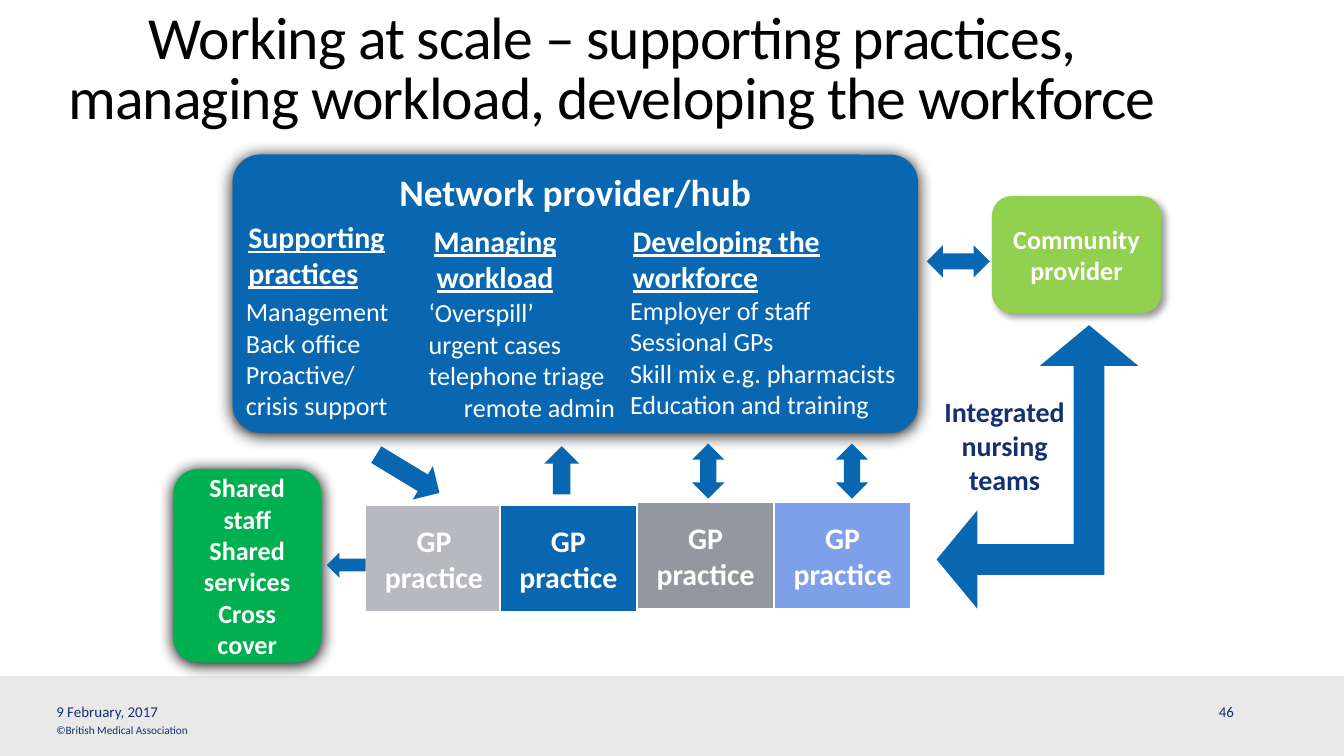
from dataclasses import dataclass
from typing import NamedTuple

from lxml.etree import SubElement
from pptx import Presentation
from pptx.dml.color import RGBColor
from pptx.enum.shapes import MSO_SHAPE
from pptx.enum.text import MSO_ANCHOR, MSO_AUTO_SIZE, PP_ALIGN
from pptx.oxml.ns import qn
from pptx.util import Pt


@dataclass(frozen=True)
class Theme:
    font: str = "Calibri"
    black: str = "000000"
    white: str = "FFFFFF"
    navy: str = "13316E"
    blue: str = "0967B1"
    band: str = "E9E9E9"
    lime: str = "92D050"
    green: str = "00B050"
    practices: tuple = ("B7B9BF", "0967B1", "93979F", "7DA0E9")
    title_size: float = 32
    hub_size: float = 20
    heading_size: float = 16
    label_size: float = 15
    body_size: float = 14
    footer_size: float = 8
    copyright_size: float = 6


class Box(NamedTuple):
    left: float
    top: float
    width: float
    height: float


class Style(NamedTuple):
    size: float
    color: str = "FFFFFF"
    bold: bool = False
    underline: bool = False
    align: PP_ALIGN = PP_ALIGN.LEFT
    anchor: MSO_ANCHOR = MSO_ANCHOR.TOP


class Shadow(NamedTuple):
    blur: float
    distance: float
    angle: float
    opacity: int


class Column(NamedTuple):
    heading: str
    heading_box: Box
    align: PP_ALIGN
    lines: str
    body_box: Box


class Arrow(NamedTuple):
    kind: MSO_SHAPE
    box: Box
    rotation: float = 0
    adjustments: tuple = ()


THEME = Theme()
CENTER, MIDDLE = PP_ALIGN.CENTER, MSO_ANCHOR.MIDDLE
GLOW = Shadow(8.5, 1, 90, 100)
SOFT = Shadow(4, 3, 45, 40)

COLUMNS = (
    Column("Supporting practices", Box(126, 113.8, 114.5, 46.1), PP_ALIGN.LEFT,
           "Management\nBack office\nProactive/\ncrisis support",
           Box(124.6, 154.8, 92.2, 74.9)),
    Column("Managing workload", Box(212.4, 115.9, 105.8, 46.1), CENTER,
           "‘Overspill’\nurgent cases\ntelephone triage\nremote admin",
           Box(222.5, 155.5, 121.7, 74.9)),
    Column("Developing the workforce", Box(331.9, 115.9, 141.8, 46.1), PP_ALIGN.LEFT,
           "Employer of staff\nSessional GPs\nSkill mix e.g. pharmacists\nEducation and training",
           Box(330.5, 154.1, 161.3, 74.9)),
)
PRACTICE_CORNERS = ((195.8, 270.7), (267.8, 270.7), (341.3, 269.3), (414.7, 269.3))
ARROWS = (
    Arrow(MSO_SHAPE.UP_ARROW, Box(291.6, 239, 18.7, 25.9)),
    Arrow(MSO_SHAPE.LEFT_RIGHT_ARROW, Box(496.5, 131.4, 33.8, 17.3)),
    Arrow(MSO_SHAPE.LEFT_UP_ARROW, Box(501.8, 174.2, 108, 151.9), 0, (0.153, 0.244, 0.202)),
    Arrow(MSO_SHAPE.UP_DOWN_ARROW, Box(370.8, 237.6, 17.3, 29.5)),
    Arrow(MSO_SHAPE.UP_DOWN_ARROW, Box(447.8, 237.6, 17.3, 29.5)),
    Arrow(MSO_SHAPE.LEFT_ARROW, Box(175, 295.9, 20.9, 13.7)),
    Arrow(MSO_SHAPE.RIGHT_ARROW, Box(198.7, 243.4, 39.6, 20.9), 31.2),
)


def points(box: Box) -> tuple:
    return tuple(Pt(value) for value in box)


def write(shape, text: str, style: Style, wrap: bool = True, inset: bool = True) -> None:
    frame = shape.text_frame
    frame.text = text
    frame.word_wrap = wrap
    frame.auto_size = MSO_AUTO_SIZE.NONE
    frame.vertical_anchor = style.anchor
    if not inset:
        frame.margin_left = frame.margin_right = frame.margin_top = frame.margin_bottom = 0
    for paragraph in frame.paragraphs:
        paragraph.alignment = style.align
        for run in paragraph.runs:
            run.font.name = THEME.font
            run.font.size = Pt(style.size)
            run.font.bold = style.bold
            run.font.underline = style.underline
            run.font.color.rgb = RGBColor.from_string(style.color)


def add_text(slide, box: Box, text: str, style: Style, wrap: bool = True, inset: bool = True):
    shape = slide.shapes.add_textbox(*points(box))
    write(shape, text, style, wrap, inset)
    return shape


def add_block(slide, kind: MSO_SHAPE, box: Box, fill: str, adjustments: tuple = ()):
    shape = slide.shapes.add_shape(kind, *points(box))
    shape.shadow.inherit = False
    shape.fill.solid()
    shape.fill.fore_color.rgb = RGBColor.from_string(fill)
    shape.line.fill.background()
    for index, value in enumerate(adjustments):
        shape.adjustments[index] = value
    return shape


def add_shadow(shape, shadow: Shadow) -> None:
    effects = shape._element.spPr.find(qn("a:effectLst"))
    outer = SubElement(effects, qn("a:outerShdw"), blurRad=str(Pt(shadow.blur)),
                       dist=str(Pt(shadow.distance)), dir=str(shadow.angle * 60000),
                       algn="ctr", rotWithShape="0")
    color = SubElement(outer, qn("a:srgbClr"), val=THEME.black)
    SubElement(color, qn("a:alpha"), val=str(shadow.opacity * 1000))


def add_title(slide) -> None:
    title = slide.shapes.title
    title.left, title.top, title.width, title.height = points(Box(22.3, 6.5, 611.3, 75.6))
    write(title, "Working at scale – supporting practices, "
          "managing workload, developing the workforce",
          Style(THEME.title_size, THEME.black, align=CENTER), inset=False)
    paragraph = title.text_frame.paragraphs[0]
    paragraph.line_spacing = Pt(32)
    paragraph.runs[0].font._element.set("spc", "-50")


def add_footer(slide) -> None:
    add_block(slide, MSO_SHAPE.RECTANGLE, Box(0, 362.2, 720, 42.8), THEME.band)
    for text, box, size in (
        ("©British Medical Association", Box(30.2, 387.4, 149, 7.2), THEME.copyright_size),
        ("9 February, 2017", Box(30.2, 376.6, 228.2, 9.4), THEME.footer_size),
        ("46", Box(653, 376.6, 20.2, 9.4), THEME.footer_size),
    ):
        add_text(slide, box, text, Style(size, THEME.navy, anchor=MIDDLE), inset=False)


def add_hub(slide) -> None:
    hub = add_block(slide, MSO_SHAPE.ROUNDED_RECTANGLE, Box(124.6, 82.8, 367.2, 149),
                    THEME.blue, (0.1,))
    add_shadow(hub, GLOW)
    write(hub, "Network provider/hub", Style(THEME.hub_size, bold=True, align=CENTER))
    for column in COLUMNS:
        heading = add_block(slide, MSO_SHAPE.RECTANGLE, column.heading_box, THEME.blue)
        write(heading, column.heading,
              Style(THEME.heading_size, bold=True, underline=True, align=column.align))
    for column in COLUMNS:
        body = add_text(slide, column.body_box, column.lines, Style(THEME.body_size), wrap=False)
        if column.heading == "Managing workload":
            last = body.text_frame.paragraphs[-1]
            last._p.get_or_add_pPr().set("marL", str(Pt(19)))


def add_practices(slide) -> None:
    for (left, top), fill in zip(PRACTICE_CORNERS, THEME.practices):
        practice = add_block(slide, MSO_SHAPE.FLOWCHART_PROCESS, Box(left, top, 73.4, 56.9), fill)
        practice.line.color.rgb = RGBColor.from_string(THEME.white)
        practice.line.width = Pt(0.75)
        write(practice, "GP practice",
              Style(THEME.heading_size, bold=True, align=CENTER, anchor=MIDDLE))


def add_partners(slide) -> None:
    style = Style(THEME.body_size, bold=True, align=CENTER, anchor=MIDDLE)
    for kind, box, fill, shadow, text in (
        (MSO_SHAPE.FLOWCHART_ALTERNATE_PROCESS, Box(531.4, 105.1, 90.7, 62.6),
         THEME.lime, SOFT, "Community provider"),
        (MSO_SHAPE.ROUNDED_RECTANGLE, Box(92.9, 251.3, 79.2, 103.7),
         THEME.green, GLOW, "Shared staff\nShared services\nCross cover"),
    ):
        partner = add_block(slide, kind, box, fill)
        add_shadow(partner, shadow)
        write(partner, text, style)


def main() -> None:
    presentation = Presentation()
    presentation.slide_width, presentation.slide_height = Pt(720), Pt(405)
    slide = presentation.slides.add_slide(presentation.slide_layouts[5])
    add_footer(slide)
    add_title(slide)
    add_hub(slide)
    add_practices(slide)
    add_partners(slide)
    for arrow in ARROWS:
        shape = add_block(slide, arrow.kind, arrow.box, THEME.blue, arrow.adjustments)
        shape.rotation = arrow.rotation
    add_text(slide, Box(493.9, 208.1, 88.6, 61.9), "Integrated nursing teams",
             Style(THEME.label_size, THEME.navy, bold=True, align=CENTER))
    presentation.save("out.pptx")


if __name__ == "__main__":
    main()
